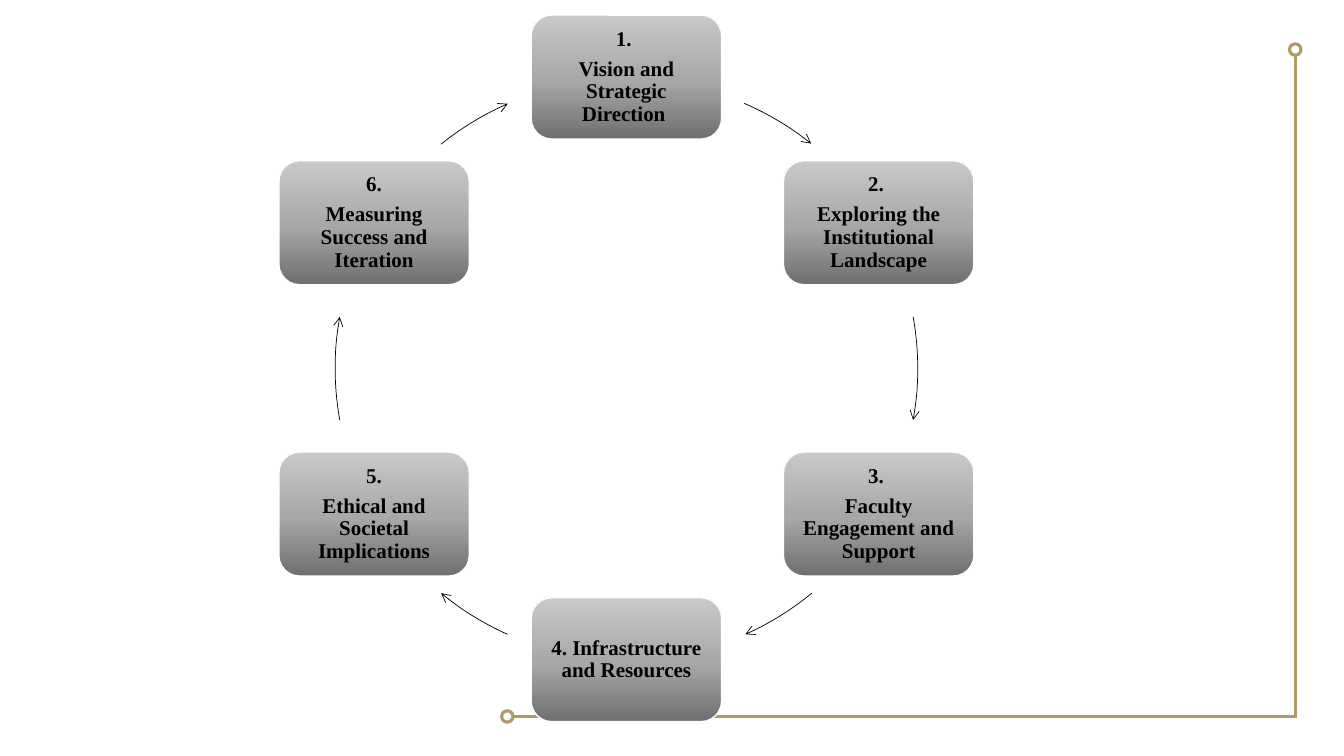
import dataclasses
import math

import lxml.etree
import pptx
import pptx.dml.color
import pptx.enum.shapes
import pptx.enum.text
import pptx.oxml.ns
import pptx.util

SHAPES = pptx.enum.shapes.MSO_SHAPE
COLUMNS, ROWS = 160, 90  # square grid cells, twelve to the inch


def color(code):
    return pptx.dml.color.RGBColor.from_string(code)


def assign(target, values):
    for name, value in values.items():
        setattr(target, name, value)


def add_child(parent, tag, **attributes):
    return lxml.etree.SubElement(parent, pptx.oxml.ns.qn(tag), attributes)


@dataclasses.dataclass(frozen=True)
class Theme:
    font: str = "Times New Roman"
    text_size: float = 15
    paragraph_gap: float = 5.25
    ink: str = "000000"
    gold: str = "AD9C65"
    card_edge: str = "FFFFFF"
    card_stops: tuple = ((0, "6F6F6F"), (48, "A8A8A8"), (100, "C9C9C9"))
    frame_width: float = 2.25
    card_edge_width: float = 1
    arrow_width: float = 0.5


class CyclePage:
    def __init__(self, deck, theme):
        self.theme = theme
        self.cell_width = deck.slide_width / COLUMNS
        self.cell_height = deck.slide_height / ROWS
        self.page = deck.slides.add_slide(deck.slide_layouts[6])

    def place(self, column, row):
        return round(column * self.cell_width), round(row * self.cell_height)

    def stroke(self, element, code, width):
        element.line.color.rgb = color(code)
        element.line.width = pptx.util.Pt(width)

    def centered_shape(self, kind, center, size):
        corner = [middle - length / 2 for middle, length in zip(center, size)]
        shape = self.page.shapes.add_shape(kind, *self.place(*corner), *self.place(*size))
        shape.shadow.inherit = False
        return shape

    def frame_line(self, start, end):
        line = self.page.shapes.add_connector(
            pptx.enum.shapes.MSO_CONNECTOR.STRAIGHT, *self.place(*start), *self.place(*end))
        self.stroke(line, self.theme.gold, self.theme.frame_width)
        add_child(line.element.spPr, "a:effectLst")

    def frame_ring(self, center):
        ring = self.centered_shape(SHAPES.OVAL, center, (1.36, 1.36))
        ring.fill.background()
        self.stroke(ring, self.theme.gold, self.theme.frame_width)

    def card(self, center, size, paragraphs):
        theme = self.theme
        card = self.centered_shape(SHAPES.ROUNDED_RECTANGLE, center, size)
        self.stroke(card, theme.card_edge, theme.card_edge_width)

        # Three-stop gradient, dark at the bottom
        card.fill.gradient()
        card.fill.gradient_angle = 90
        stops = card.element.spPr.find(".//" + pptx.oxml.ns.qn("a:gsLst"))
        for stop in list(stops):
            stops.remove(stop)
        for position, code in theme.card_stops:
            stop = add_child(stops, "a:gs", pos=str(position * 1000))
            add_child(stop, "a:srgbClr", val=code)

        # Number and title
        frame = card.text_frame
        margin = pptx.util.Inches(0.06)
        assign(frame, {
            "word_wrap": True,
            "vertical_anchor": pptx.enum.text.MSO_ANCHOR.MIDDLE,
            "margin_left": margin, "margin_right": margin,
            "margin_top": margin, "margin_bottom": margin,
        })
        for index, text in enumerate(paragraphs):
            para = frame.add_paragraph() if index else frame.paragraphs[0]
            assign(para, {
                "alignment": pptx.enum.text.PP_ALIGN.CENTER,
                "line_spacing": 0.9,
                "space_after": pptx.util.Pt(theme.paragraph_gap),
            })
            span = para.add_run()
            span.text = text
            assign(span.font, {
                "name": theme.font, "size": pptx.util.Pt(theme.text_size), "bold": True})
            span.font.color.rgb = color(theme.ink)

    def arc_arrow(self, center, radius, middle, half_span):
        arc = self.centered_shape(SHAPES.ARC, center, (2 * radius, 2 * radius))
        for index, angle in enumerate((middle - half_span, middle + half_span)):
            arc.adjustments[index] = angle % 360 * 0.6
        arc.fill.background()
        self.stroke(arc, self.theme.ink, self.theme.arrow_width)
        add_child(arc.element.spPr.get_or_add_ln(), "a:tailEnd", type="arrow")


CENTER = (74.58, 43.86)
RADIUS = 34.68
CARD_SIZE = (22.68, 14.76)
STEPS = [
    ("1. ", "Vision and Strategic Direction "),
    ("2. ", "Exploring the Institutional Landscape"),
    ("3. ", "Faculty Engagement and Support"),
    ("4. Infrastructure and Resources",),
    ("5.", "Ethical and Societal Implications"),
    ("6.", "Measuring Success and Iteration"),
]
# Middle angle, half span and centre shift of the arrow after each step
ARROWS = [
    (-59, 7.7, (0.3, 0.3)),
    (0, 10.2, (0, 0)),
    (58.2, 7.7, (0, 0)),
    (121.8, 7.7, (0, 0)),
    (180, 10.2, (0, 0)),
    (238.8, 7.7, (-0.3, 0.3)),
]


def main():
    deck = pptx.Presentation()
    assign(deck, {"slide_width": pptx.util.Inches(13.333),
                  "slide_height": pptx.util.Inches(7.5)})
    cycle = CyclePage(deck, Theme())

    # Corner frame
    cycle.frame_line((154.2, 6.6), (154.2, 85.5))
    cycle.frame_line((61.1, 85.3), (154.3, 85.3))
    cycle.frame_ring((60.4, 85.3))
    cycle.frame_ring((154.2, 5.9))

    # Six steps, clockwise from the top
    for index, (paragraphs, (middle, half_span, shift)) in enumerate(zip(STEPS, ARROWS)):
        angle = math.radians(60 * index - 90)
        spot = (CENTER[0] + RADIUS * math.cos(angle), CENTER[1] + RADIUS * math.sin(angle))
        cycle.card(spot, CARD_SIZE, paragraphs)
        arrow_center = (CENTER[0] + shift[0], CENTER[1] + shift[1])
        cycle.arc_arrow(arrow_center, RADIUS, middle, half_span)

    deck.save("out.pptx")


if __name__ == "__main__":
    main()
